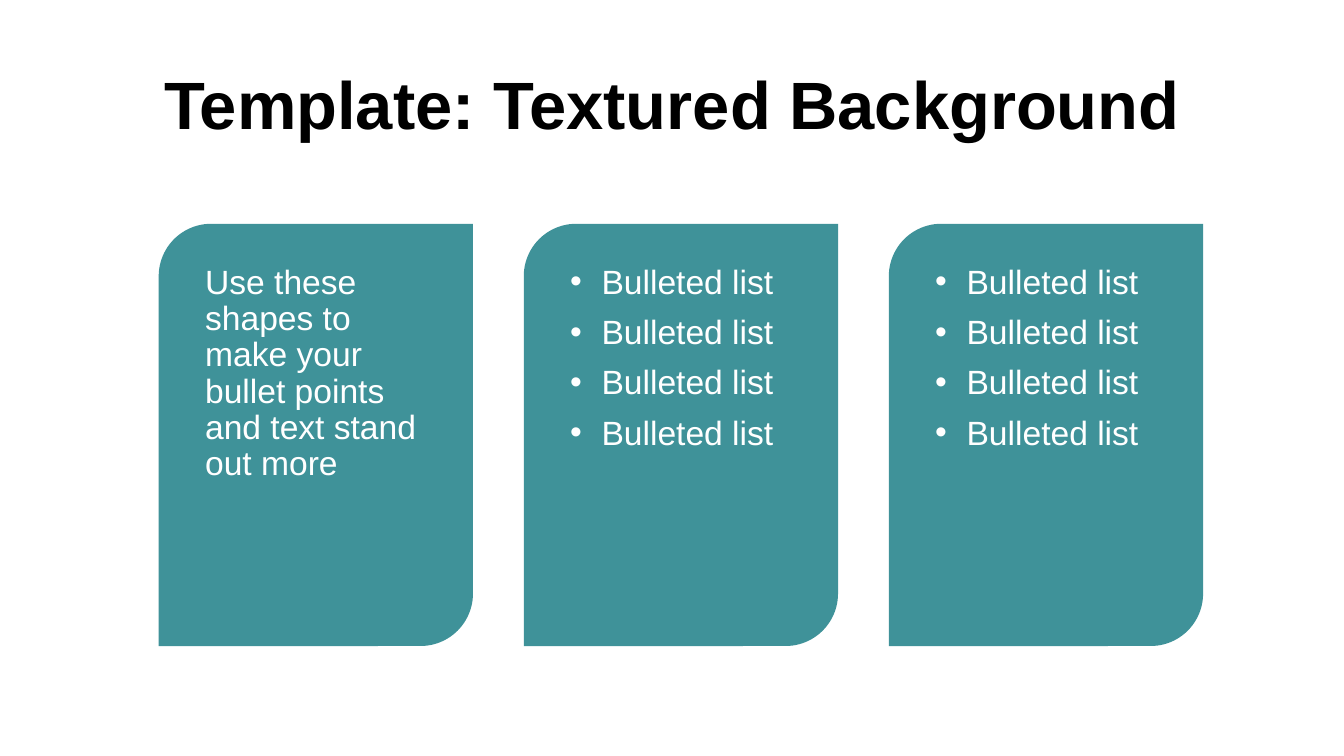
from dataclasses import dataclass

from lxml import etree
from pptx import Presentation
from pptx.dml.color import RGBColor
from pptx.enum.shapes import MSO_SHAPE
from pptx.enum.text import MSO_ANCHOR, PP_ALIGN
from pptx.oxml.ns import qn
from pptx.util import Cm, Pt

CARD_SHAPE = MSO_SHAPE.ROUND_2_DIAG_RECTANGLE
TOP, MIDDLE = MSO_ANCHOR.TOP, MSO_ANCHOR.MIDDLE
LEFT, CENTER = PP_ALIGN.LEFT, PP_ALIGN.CENTER

TITLE = "Template: Textured Background"
BULLETS = ["Bulleted list"] * 4
CARDS = [
    {"lines": ["Use these shapes to make your bullet points and text stand out more"],
     "bulleted": False},
    {"lines": BULLETS, "bulleted": True},
    {"lines": BULLETS, "bulleted": True},
]


@dataclass(frozen=True)
class Theme:
    font: str = "Arial"
    title_size: float = 47.8
    body_size: float = 24
    background: RGBColor = RGBColor(0xFF, 0xFF, 0xFF)
    title_color: RGBColor = RGBColor(0x00, 0x00, 0x00)
    card_fill: RGBColor = RGBColor(0x3F, 0x92, 0x99)
    card_text: RGBColor = RGBColor(0xFF, 0xFF, 0xFF)


THEME = Theme()

# Lengths in centimetres
PAGE_WIDTH, PAGE_HEIGHT = 33.87, 19.05
TITLE_BOX = (2.39, 1.6, 29.08, 2.21)
CARD_LEFT, CARD_TOP = 4.0, 5.64
CARD_WIDTH, CARD_HEIGHT = 7.92, 10.64
CARD_GAP = 1.28
TEXT_INSET = 0.92
BULLET_INDENT = 0.79


def add_bullet(para):
    properties = para._p.get_or_add_pPr()
    properties.set("marL", str(Cm(BULLET_INDENT)))
    properties.set("indent", str(-Cm(BULLET_INDENT)))
    etree.SubElement(properties, qn("a:buFont")).set("typeface", THEME.font)
    etree.SubElement(properties, qn("a:buChar")).set("char", "•")


def add_text(page, place, lines, size, color, anchor=TOP, align=LEFT,
             bold=False, bulleted=False):
    box = page.shapes.add_textbox(*map(Cm, place))
    frame = box.text_frame
    frame.word_wrap = True
    frame.vertical_anchor = anchor
    for index, line in enumerate(lines):
        para = frame.paragraphs[0] if index == 0 else frame.add_paragraph()
        para.alignment = align
        para.line_spacing = 0.9
        if index:
            para.space_before = Pt(10)
        if bulleted:
            add_bullet(para)
        span = para.add_run()
        span.text = line
        span.font.name = THEME.font
        span.font.size = Pt(size)
        span.font.bold = bold
        span.font.color.rgb = color


def add_card(page, left, card):
    place = (left, CARD_TOP, CARD_WIDTH, CARD_HEIGHT)
    shape = page.shapes.add_shape(CARD_SHAPE, *map(Cm, place))
    shape.shadow.inherit = False
    shape.fill.solid()
    shape.fill.fore_color.rgb = THEME.card_fill
    shape.line.fill.background()
    text_place = (left + TEXT_INSET, CARD_TOP + TEXT_INSET,
                  CARD_WIDTH - 2 * TEXT_INSET, CARD_HEIGHT - 2 * TEXT_INSET)
    add_text(page, text_place, card["lines"], THEME.body_size, THEME.card_text,
             bulleted=card["bulleted"])


def main():
    deck = Presentation()
    deck.slide_width, deck.slide_height = Cm(PAGE_WIDTH), Cm(PAGE_HEIGHT)
    page = deck.slides.add_slide(deck.slide_layouts[6])
    page.background.fill.solid()
    page.background.fill.fore_color.rgb = THEME.background
    for column, card in enumerate(CARDS):
        add_card(page, CARD_LEFT + column * (CARD_WIDTH + CARD_GAP), card)
    add_text(page, TITLE_BOX, [TITLE], THEME.title_size, THEME.title_color,
             anchor=MIDDLE, align=CENTER, bold=True)
    deck.save("out.pptx")


if __name__ == "__main__":
    main()
